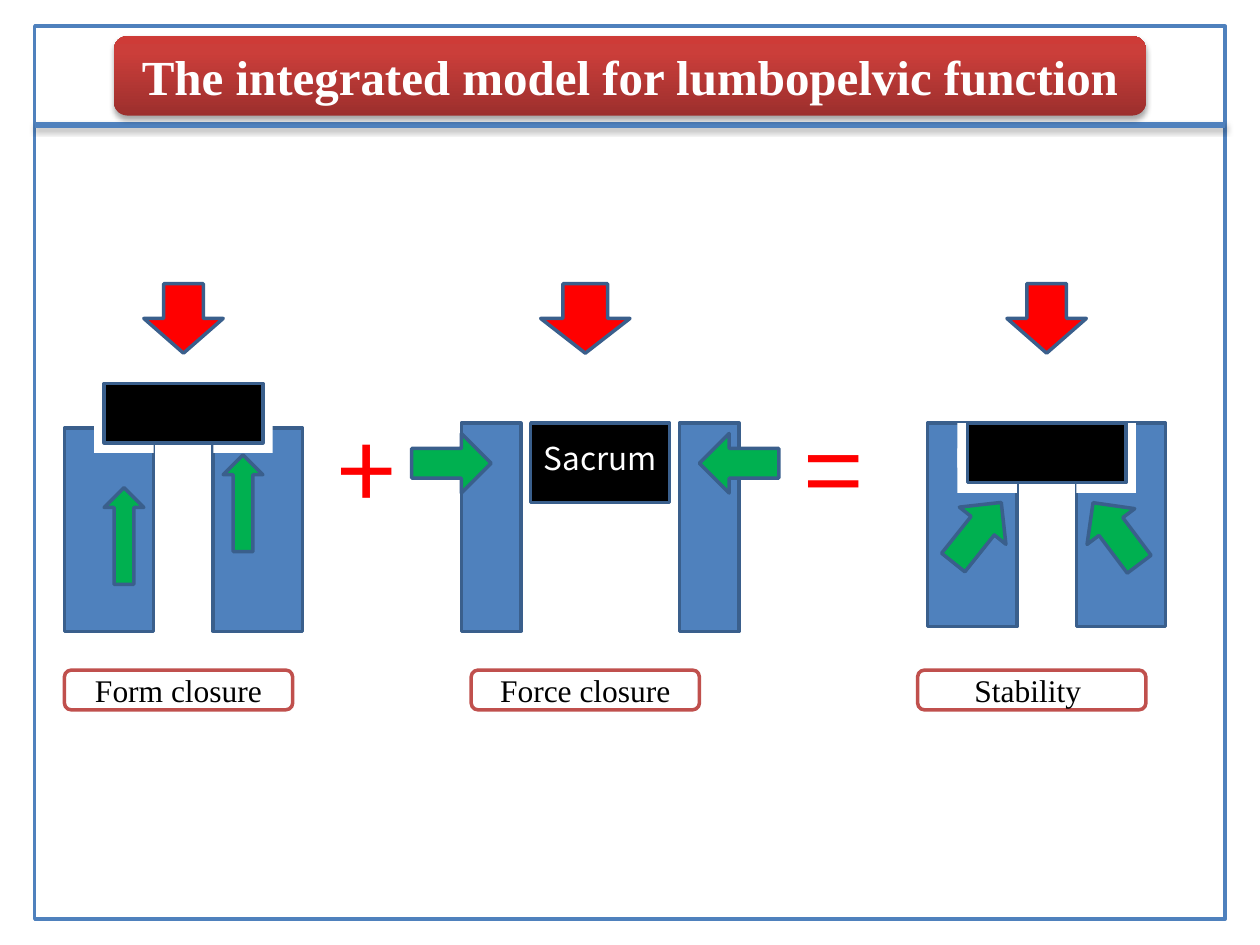
from dataclasses import dataclass

from pptx import Presentation
from pptx.dml.color import RGBColor
from pptx.enum.shapes import MSO_CONNECTOR, MSO_SHAPE
from pptx.enum.text import MSO_ANCHOR, PP_ALIGN
from pptx.oxml import parse_xml
from pptx.oxml.ns import nsdecls, qn
from pptx.util import Cm, Pt

BLUE, OUTLINE, MAROON = "4F81BD", "3A5F8C", "C0504D"
RED, GREEN, BLACK, WHITE = "FF0000", "00B050", "000000", "FFFFFF"
SERIF, SANS = "Times New Roman", "Noto Sans CJK KR"
PILLAR_TOP, ARROW_TOP, SYMBOL_TOP, LABEL_TOP = 8.53, 5.72, 8.74, 13.51
TITLE_STOPS = ((0, "9C2F2D"), (80, "CB3E3A"), (100, "CE3B37"))


@dataclass(frozen=True)
class Box:
    left: float
    top: float
    width: float
    height: float

    def lengths(self) -> tuple:
        return Cm(self.left), Cm(self.top), Cm(self.width), Cm(self.height)


@dataclass(frozen=True)
class GreenArrow:
    kind: MSO_SHAPE
    box: Box
    rotation: float = 0


@dataclass(frozen=True)
class Joint:
    left: float
    pillar_top: float
    notch_tops: tuple
    block_top: float


@dataclass(frozen=True)
class Label:
    text: str
    left: float


def color(hex_value: str) -> RGBColor:
    return RGBColor.from_string(hex_value)


def draw_shape(slide, kind, box: Box, fill: str, line: str | None = OUTLINE, rotation: float = 0):
    shape = slide.shapes.add_shape(kind, *box.lengths())
    shape.shadow.inherit = False
    shape.rotation = rotation
    shape.fill.solid()
    shape.fill.fore_color.rgb = color(fill)
    if line:
        shape.line.color.rgb = color(line)
        shape.line.width = Pt(2)
    else:
        shape.line.fill.background()
    return shape


def write_text(shape, text: str, *, size: float, font: str, fill: str, bold: bool = False) -> None:
    frame = shape.text_frame
    frame.word_wrap = True
    frame.vertical_anchor = MSO_ANCHOR.MIDDLE
    frame.margin_left = frame.margin_right = frame.margin_top = frame.margin_bottom = 0
    paragraph = frame.paragraphs[0]
    paragraph.alignment = PP_ALIGN.CENTER
    run = paragraph.add_run()
    run.text = text
    run.font.size = Pt(size)
    run.font.name = font
    run.font.bold = bold
    run.font.color.rgb = color(fill)
    properties = run._r.get_or_add_rPr()
    for tag in ("ea", "cs"):
        properties.append(parse_xml(f'<a:{tag} {nsdecls("a")} typeface="{font}"/>'))


def draw_text(slide, text: str, box: Box, *, size: float, fill: str) -> None:
    write_text(slide.shapes.add_textbox(*box.lengths()), text, size=size, font=SANS, fill=fill)


def add_shadow(shape_properties) -> None:
    for effects in shape_properties.findall(qn("a:effectLst")):
        shape_properties.remove(effects)
    shape_properties.append(parse_xml(
        f'<a:effectLst {nsdecls("a")}><a:outerShdw blurRad="40000" dist="23000" dir="5400000" '
        f'rotWithShape="0"><a:srgbClr val="{BLACK}"><a:alpha val="35000"/></a:srgbClr>'
        '</a:outerShdw></a:effectLst>'))


def draw_header(slide) -> None:
    draw_shape(slide, MSO_SHAPE.RECTANGLE, Box(0.7, 0.53, 24, 18), WHITE, BLUE)
    rule = slide.shapes.add_connector(MSO_CONNECTOR.STRAIGHT, Cm(0.7), Cm(2.52), Cm(24.7), Cm(2.52))
    rule.line.color.rgb = color(BLUE)
    rule.line.width = Pt(3)
    add_shadow(rule._element.spPr)
    title = draw_shape(slide, MSO_SHAPE.ROUNDED_RECTANGLE, Box(2.3, 0.73, 20.8, 1.6), MAROON, None)
    properties = title._element.spPr
    stops = "".join(f'<a:gs pos="{position * 1000}"><a:srgbClr val="{value}"/></a:gs>'
                    for position, value in TITLE_STOPS)
    gradient = parse_xml(f'<a:gradFill {nsdecls("a")} rotWithShape="1"><a:gsLst>{stops}</a:gsLst>'
                         '<a:lin ang="16200000" scaled="0"/></a:gradFill>')
    properties.replace(properties.find(qn("a:solidFill")), gradient)
    add_shadow(properties)
    write_text(title, "The integrated model for lumbopelvic function",
               size=28, font=SERIF, fill=WHITE, bold=True)


def draw_joint(slide, joint: Joint) -> None:
    inner = joint.left + 3
    for left in (joint.left, inner):
        draw_shape(slide, MSO_SHAPE.RECTANGLE, Box(left, joint.pillar_top, 1.8, 4.1), BLUE)
    for top in joint.notch_tops:
        for left in (joint.left + 0.6, inner):
            draw_shape(slide, MSO_SHAPE.RECTANGLE, Box(left, top, 1.2, 0.9), WHITE, None)
    draw_shape(slide, MSO_SHAPE.RECTANGLE, Box(joint.left + 0.8, joint.block_top, 3.2, 1.2), BLACK)
    draw_load(slide, joint.left + 1.6, 1.6)


def draw_load(slide, left: float, width: float) -> None:
    draw_shape(slide, MSO_SHAPE.DOWN_ARROW, Box(left, ARROW_TOP, width, 1.4), RED)


def draw_force_closure(slide) -> None:
    for left in (9.3, 13.7):
        draw_shape(slide, MSO_SHAPE.RECTANGLE, Box(left, PILLAR_TOP, 1.2, 4.2), BLUE)
    draw_shape(slide, MSO_SHAPE.RECTANGLE, Box(10.7, PILLAR_TOP, 2.8, 1.6), BLACK)
    draw_text(slide, "Sacrum", Box(10.7, SYMBOL_TOP, 2.8, 1), size=18, fill=WHITE)
    draw_load(slide, 10.9, 1.8)


def main() -> None:
    presentation = Presentation()
    presentation.slide_width, presentation.slide_height = Cm(25.4), Cm(19.05)
    slide = presentation.slides.add_slide(presentation.slide_layouts[6])

    draw_header(slide)
    draw_joint(slide, Joint(1.3, 8.63, (8.23,), 7.73))
    draw_force_closure(slide)
    draw_joint(slide, Joint(18.7, PILLAR_TOP, (9.04, PILLAR_TOP), PILLAR_TOP))

    green_arrows = (
        GreenArrow(MSO_SHAPE.UP_ARROW, Box(2.1, 9.83, 0.8, 1.95)),
        GreenArrow(MSO_SHAPE.UP_ARROW, Box(4.5, 9.17, 0.8, 1.95)),
        GreenArrow(MSO_SHAPE.LEFT_ARROW, Box(14.1, SYMBOL_TOP, 1.6, 1.2)),
        GreenArrow(MSO_SHAPE.LEFT_ARROW, Box(8.3, SYMBOL_TOP, 1.6, 1.2), 180),
        GreenArrow(MSO_SHAPE.UP_ARROW, Box(19.1, 9.96, 1.2, 1.55), 38.6),
        GreenArrow(MSO_SHAPE.UP_ARROW, Box(21.9, 9.98, 1.2, 1.55), 323.1),
    )
    for arrow in green_arrows:
        draw_shape(slide, arrow.kind, arrow.box, GREEN, rotation=arrow.rotation)

    for symbol, left in (("+", 6.3), ("=", 15.7)):
        draw_text(slide, symbol, Box(left, SYMBOL_TOP, 2.2, 1.4), size=60, fill=RED)

    for label in (Label("Form closure", 1.3), Label("Force closure", 9.5), Label("Stability ", 18.5)):
        shape = draw_shape(slide, MSO_SHAPE.ROUNDED_RECTANGLE,
                           Box(label.left, LABEL_TOP, 4.6, 0.8), WHITE, MAROON)
        write_text(shape, label.text, size=18, font=SERIF, fill=BLACK)

    presentation.save("out.pptx")


if __name__ == "__main__":
    main()
